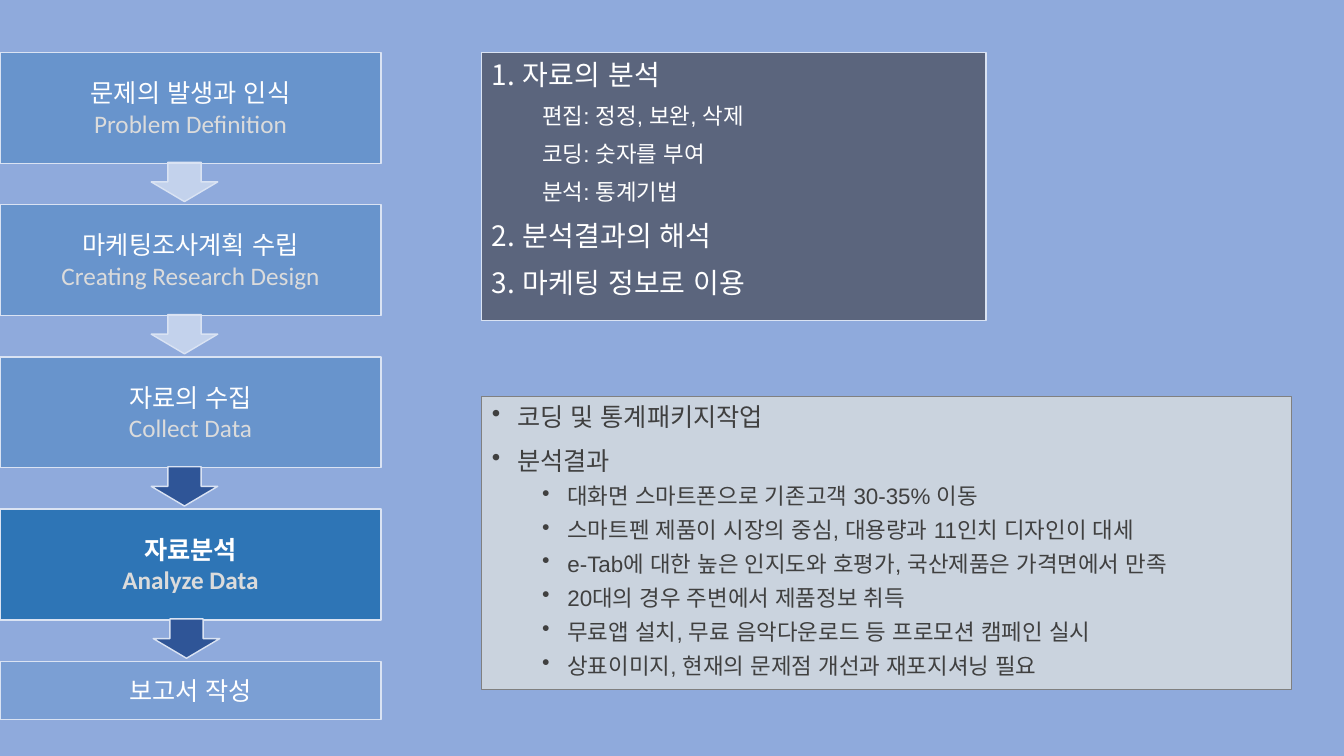
"""Build a slide on the data analysis step of the marketing research process."""
from pptx import Presentation
from pptx.dml.color import RGBColor
from pptx.enum.lang import MSO_LANGUAGE_ID
from pptx.enum.shapes import MSO_SHAPE
from pptx.enum.text import MSO_ANCHOR, PP_ALIGN
from pptx.oxml.ns import qn
from pptx.util import Inches, Pt
from lxml.etree import SubElement

STEPS = [
    ("문제의 발생과 인식", "Problem Definition"),
    ("마케팅조사계획 수립", "Creating Research Design"),
    ("자료의 수집", "Collect Data"),
    ("자료분석", "Analyze Data"),
    ("보고서 작성",),
]
CURRENT_STEP = 3
TASKS = [
    (0, " 자료의 분석"),
    (1, "편집: 정정, 보완, 삭제"),
    (1, "코딩: 숫자를 부여"),
    (1, "분석: 통계기법"),
    (0, " 분석결과의 해석"),
    (0, " 마케팅 정보로 이용"),
]
FINDINGS = [
    (0, "코딩 및 통계패키지작업"),
    (0, "분석결과"),
    (1, "대화면 스마트폰으로 기존고객 30-35% 이동"),
    (1, "스마트펜 제품이 시장의 중심, 대용량과 11인치 디자인이 대세"),
    (1, "e-Tab에 대한 높은 인지도와 호평가, 국산제품은 가격면에서 만족"),
    (1, "20대의 경우 주변에서 제품정보 취득"),
    (1, "무료앱 설치, 무료 음악다운로드 등 프로모션 캠페인 실시"),
    (1, "상표이미지, 현재의 문제점 개선과 재포지셔닝 필요"),
]
TASK_LEVELS = [
    {"size": 20, "before": 9.5, "margin": 0, "hanging": 0, "mark": ("buAutoNum", "type", "arabicPeriod")},
    {"size": 16, "before": 8, "margin": 0.5, "hanging": 0, "mark": None},
]
DOT = ("buChar", "char", "•")
FINDING_LEVELS = [
    {"size": 18, "before": 10, "margin": 0.25, "hanging": 0.25, "mark": DOT},
    {"size": 16, "before": 5, "margin": 0.75, "hanging": 0.25, "mark": DOT},
]
TOP, STEP_WIDTH, STEP_HEIGHT, STEP_PITCH = 0.52, 3.78, 1.1, 1.51
LAST_HEIGHT = 0.58
ARROW_LEFT, ARROW_WIDTH, ARROW_HEIGHT = 1.5, 0.66, 0.39
PANEL_LEFT = 4.78


def color(value):
    return RGBColor.from_string(value)


def add_box(page, kind, place, fill, opacity, line="DAE3F3", weight=1):
    box = page.shapes.add_shape(kind, *(Inches(length) for length in place))
    box.shadow.inherit = False
    box.fill.solid()
    box.fill.fore_color.rgb = color(fill)
    if opacity < 100:
        tint = box.fill._xPr.find(qn("a:solidFill"))[0]
        SubElement(tint, qn("a:alpha"), val=str(opacity * 1000))
    box.line.color.rgb = color(line)
    box.line.width = Pt(weight)
    return box


def style(para, name, size, value, bold=False):
    para.font.name = name
    para.font.size = Pt(size)
    para.font.bold = bold
    para.font.color.rgb = color(value)
    para.runs[0].font.language_id = MSO_LANGUAGE_ID.KOREAN


def add_paragraph(frame, index, text):
    para = frame.paragraphs[0] if index == 0 else frame.add_paragraph()
    para.text = text
    return para


def add_steps(page):
    for number, labels in enumerate(STEPS):
        top = TOP + number * STEP_PITCH
        is_last = number == len(STEPS) - 1
        current = number == CURRENT_STEP
        height = LAST_HEIGHT if is_last else STEP_HEIGHT
        opacity = 100 if current else 20 if is_last else 40
        box = add_box(page, MSO_SHAPE.RECTANGLE, (0, top, STEP_WIDTH, height), "2E75B6", opacity)
        frame = box.text_frame
        frame.vertical_anchor = MSO_ANCHOR.MIDDLE
        for index, (text, value) in enumerate(zip(labels, ("FFFFFF", "DBDBDB"))):
            para = add_paragraph(frame, index, text)
            para.alignment = PP_ALIGN.CENTER
            style(para, "Calibri", 18, value, current)
        if not is_last:
            near = number >= CURRENT_STEP - 1
            left = ARROW_LEFT + (0.02 if current else 0)
            place = (left, top + STEP_HEIGHT - 0.01, ARROW_WIDTH, ARROW_HEIGHT)
            add_box(page, MSO_SHAPE.DOWN_ARROW, place,
                    "2F5597" if near else "DAE3F3", 100 if near else 70)


def fill_list(box, items, levels, value):
    frame = box.text_frame
    frame.word_wrap = True
    frame.vertical_anchor = MSO_ANCHOR.TOP
    for index, (level, text) in enumerate(items):
        look = levels[level]
        para = add_paragraph(frame, index, text)
        para.level = level
        para.alignment = PP_ALIGN.LEFT
        para.space_before = Pt(look["before"])
        style(para, "Arial", look["size"], value)
        properties = para._p.get_or_add_pPr()
        properties.set("marL", str(Inches(look["margin"])))
        properties.set("indent", str(-Inches(look["hanging"])))
        if look["mark"]:
            tag, key, mark = look["mark"]
            bullet = properties.makeelement(qn("a:" + tag), {key: mark})
            properties.find(qn("a:defRPr")).addprevious(bullet)


def main():
    deck = Presentation()
    deck.slide_width, deck.slide_height = Inches(13.33), Inches(7.5)
    page = deck.slides.add_slide(deck.slide_layouts[6])
    page.background.fill.solid()
    page.background.fill.fore_color.rgb = color("8FAADC")
    add_steps(page)
    tasks = add_box(page, MSO_SHAPE.RECTANGLE, (PANEL_LEFT, TOP, 5, 2.66), "29211F", 50, weight=0.75)
    fill_list(tasks, TASKS, TASK_LEVELS, "FFFFFF")
    findings = add_box(page, MSO_SHAPE.RECTANGLE, (PANEL_LEFT, 3.93, 8.03, 2.91),
                       "E4E5E0", 70, "808080", 0.75)
    fill_list(findings, FINDINGS, FINDING_LEVELS, "404040")
    deck.save("out.pptx")


if __name__ == "__main__":
    main()
